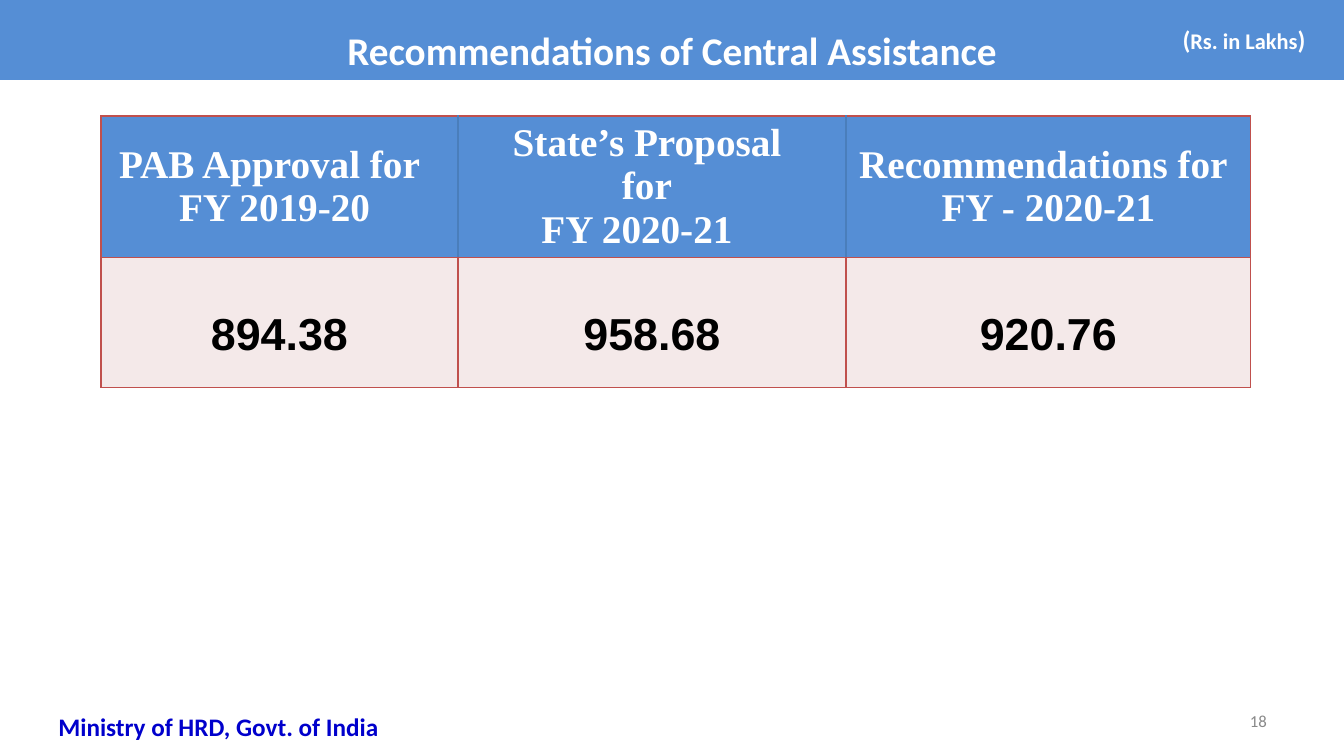
import dataclasses

import lxml.etree
import pptx
import pptx.dml.color
import pptx.enum.shapes
import pptx.enum.text
import pptx.oxml.ns
import pptx.util

SCALE = 12192000 / 1344
ALIGN = pptx.enum.text.PP_ALIGN
ANCHOR = pptx.enum.text.MSO_ANCHOR
FIT = pptx.enum.text.MSO_AUTO_SIZE


@dataclasses.dataclass(frozen=True)
class Theme:
    """Colours, typefaces and type sizes of the slide."""
    band: str = "558ED5"
    value_fill: str = "F4E9E9"
    rule: str = "C0504D"
    heading_rule: str = "4A7EBB"
    light: str = "FFFFFF"
    dark: str = "000000"
    grey: str = "898989"
    ministry: str = "0000CC"
    sans: str = "Calibri"
    serif: str = "Times New Roman"
    figure: str = "Arial"
    title_size: int = 28
    value_size: int = 32
    label_size: int = 18
    unit_size: int = 16
    number_size: int = 12


THEME = Theme()
HEADINGS = [
    [("PAB Approval for", 20), ("FY 2019-20", 10)],
    [("State’s Proposal for", 10), ("FY 2020-21", 30)],
    [("Recommendations for", 10), ("FY - 2020-21", 0)],
]
AMOUNTS = ["894.38", "958.68", "920.76"]


def px(length):
    """Turn a length in px into EMU."""
    return pptx.util.Emu(round(length * SCALE))


def rgb(colour):
    """Turn a hex string into a colour."""
    return pptx.dml.color.RGBColor.from_string(colour)


def write(paragraph, text, *, size, font, colour, bold=True,
          align=ALIGN.CENTER, spacing=None, indent=0):
    """Add formatted text to a paragraph."""
    paragraph.alignment = align
    if spacing:
        paragraph.line_spacing = spacing
    if indent:
        paragraph._p.get_or_add_pPr().set("marL", str(px(indent)))
    run = paragraph.add_run()
    run.text = text
    run.font.size = pptx.util.Pt(size)
    run.font.name = font
    run.font.bold = bold
    run.font.color.rgb = rgb(colour)


def add_label(slide, box, pieces, *, anchor=ANCHOR.TOP, wrap=True,
              fit=FIT.SHAPE_TO_FIT_TEXT, **style):
    """Add a text box holding one line of (text, size) pieces."""
    frame = slide.shapes.add_textbox(*map(px, box)).text_frame
    frame.word_wrap = wrap
    frame.auto_size = fit
    frame.vertical_anchor = anchor
    for text, size in pieces:
        write(frame.paragraphs[0], text, size=size, font=THEME.sans, **style)


def add_header(slide, box):
    """Draw the title band with the unit note at its right."""
    left, top, width, height = box
    band = slide.shapes.add_shape(
        pptx.enum.shapes.MSO_SHAPE.RECTANGLE, *map(px, box))
    band.shadow.inherit = False
    band.fill.solid()
    band.fill.fore_color.rgb = rgb(THEME.band)
    band.line.fill.background()
    band.text_frame.word_wrap = True
    band.text_frame.vertical_anchor = ANCHOR.MIDDLE
    write(band.text_frame.paragraphs[0], "Recommendations of Central Assistance",
          size=THEME.title_size, font=THEME.sans, colour=THEME.light, spacing=1.4)
    unit = [("(", THEME.label_size), ("Rs. in Lakhs", THEME.unit_size),
            (")", THEME.label_size)]
    add_label(slide, (left + width - 172, top + 19, 144, 40), unit,
              wrap=False, colour=THEME.light)


def style_cell(cell, fill, sides, margins):
    """Set the borders, fill and margins of a table cell."""
    properties = cell._tc.get_or_add_tcPr()
    for side, colour in sides.items():
        line = lxml.etree.SubElement(
            properties, pptx.oxml.ns.qn(f"a:ln{side}"), w=str(pptx.util.Pt(1)))
        solid = lxml.etree.SubElement(line, pptx.oxml.ns.qn("a:solidFill"))
        lxml.etree.SubElement(solid, pptx.oxml.ns.qn("a:srgbClr"), val=colour)
    cell.fill.solid()
    cell.fill.fore_color.rgb = rgb(fill)
    cell.vertical_anchor = ANCHOR.MIDDLE
    (cell.margin_left, cell.margin_top,
     cell.margin_right, cell.margin_bottom) = map(px, margins)


def add_assistance_table(slide, box, column_widths, row_heights):
    """Draw the table of approved, proposed and recommended amounts."""
    table = slide.shapes.add_table(
        2, len(HEADINGS), *map(px, box)).table
    for column, width in zip(table.columns, column_widths):
        column.width = px(width)
    for row, height in zip(table.rows, row_heights):
        row.height = px(height)
    last = len(HEADINGS) - 1
    for index, (heading, amount) in enumerate(zip(HEADINGS, AMOUNTS)):
        sides = dict.fromkeys("LRTB", THEME.rule)
        heading_sides = dict(sides)
        if index > 0:
            heading_sides["L"] = THEME.heading_rule
        if index < last:
            heading_sides["R"] = THEME.heading_rule
        widest_gap = max(gap for _, gap in heading)

        heading_cell = table.cell(0, index)
        style_cell(heading_cell, THEME.band, heading_sides,
                   (7, 0, 7 + widest_gap, 0))
        frame = heading_cell.text_frame
        for number, (text, gap) in enumerate(heading):
            paragraph = frame.add_paragraph() if number else frame.paragraphs[0]
            write(paragraph, text, size=THEME.title_size, font=THEME.serif,
                  colour=THEME.light, indent=widest_gap - gap)

        amount_cell = table.cell(1, index)
        style_cell(amount_cell, THEME.value_fill, sides, (1, 1, 1, 0))
        write(amount_cell.text_frame.paragraphs[0], amount,
              size=THEME.value_size, font=THEME.figure,
              colour=THEME.dark, spacing=1.5)


def add_footer(slide, box):
    """Place the ministry name and the slide number."""
    left, top, width, height = box
    add_label(slide, (left + width - 314, top, 314, height),
              [("18", THEME.number_size)], anchor=ANCHOR.MIDDLE, fit=FIT.NONE,
              colour=THEME.grey, bold=False, align=ALIGN.RIGHT)
    add_label(slide, (left, top + 5, 395, height),
              [("Ministry of HRD, Govt. of India", THEME.label_size)],
              colour=THEME.ministry)


def main():
    """Build the slide and save it."""
    deck = pptx.Presentation()
    deck.slide_width, deck.slide_height = px(1344), px(756)
    slide = deck.slides.add_slide(deck.slide_layouts[6])
    add_header(slide, (0, 0, 1344, 80))
    add_assistance_table(slide, (101, 116, 1150, 262),
                         (357, 388, 405), (132, 130))
    add_footer(slide, (21, 701, 1256, 40))
    deck.save("out.pptx")


if __name__ == "__main__":
    main()
